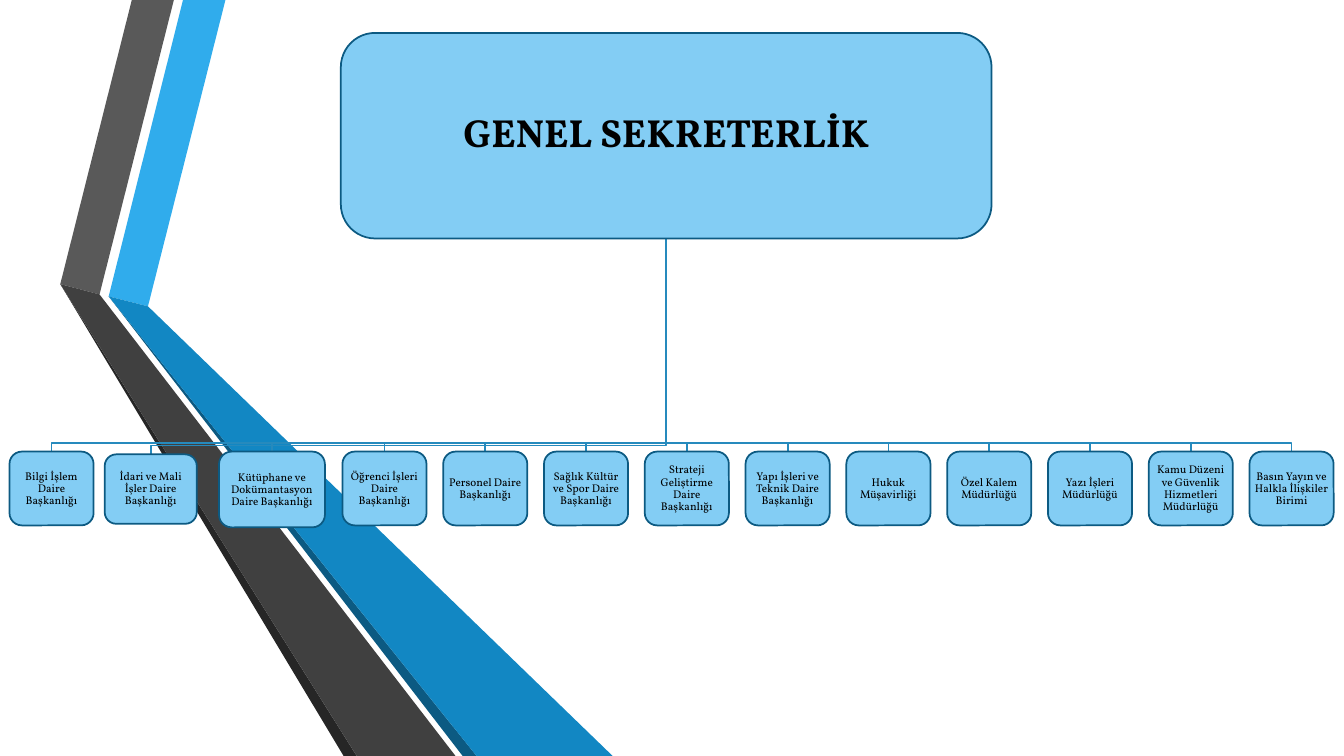
from pptx import Presentation
from pptx.dml.color import RGBColor
from pptx.enum.shapes import MSO_SHAPE
from pptx.enum.text import MSO_ANCHOR, MSO_AUTO_SIZE, PP_ALIGN
from pptx.util import Cm, Pt

ROUNDED = MSO_SHAPE.ROUNDED_RECTANGLE
MIDDLE = MSO_ANCHOR.MIDDLE
NO_AUTOFIT = MSO_AUTO_SIZE.NONE
CENTER = PP_ALIGN.CENTER
TITLE_ONLY = 5

FONT = "Vollkorn"
BOX_FILL, BOX_LINE, BRANCH_LINE, BLACK = "83CDF4", "0C5A82", "268ABD", "000000"

# Ribbon bands: colour and corners, in cm
BANDS = [
    ("30ACEC", [(2.74, 7.47), (3.73, 7.72), (5.69, -0.03), (4.62, -0.03)]),
    ("595959", [(2.51, 7.42), (4.39, -0.03), (3.33, -0.03), (1.52, 7.16)]),
    ("262626", [(1.52, 7.16), (8.66, 19.05), (8.99, 19.05)]),
    ("0C5A82", [(12.01, 19.05), (2.74, 7.47), (11.66, 19.05)]),
    ("1287C3", [(2.74, 7.47), (12.01, 19.05), (15.44, 19.05), (3.73, 7.72)]),
    ("404040", [(11.48, 19.05), (2.51, 7.42), (1.52, 7.16), (8.99, 19.05)]),
]

# Head box and unit boxes: left, top, width, height, in cm
HEAD = (8.59, 0.83, 16.4, 5.18)
HEAD_TEXT = (8.84, 1.07, 15.9, 4.67)
UNIT_TOP, UNIT_WIDTH, UNIT_HEIGHT = 11.38, 2.12, 1.86
ROW_LEFT, ROW_PITCH = 8.63, 2.54
BRANCH_RISE = 0.22

FIRST_UNITS = [
    ("Bilgi İşlem Daire Başkanlığı", (0.24, UNIT_TOP, UNIT_WIDTH, UNIT_HEIGHT)),
    ("İdari ve Mali İşler Daire Başkanlığı", (2.64, 11.45, 2.32, 1.75)),
    ("Kütüphane ve Dokümantasyon Daire Başkanlığı", (5.52, UNIT_TOP, 2.67, 1.91)),
]
ROW_UNITS = [
    "Öğrenci İşleri Daire Başkanlığı",
    "Personel Daire Başkanlığı",
    "Sağlık Kültür ve Spor Daire Başkanlığı",
    "Strateji Geliştirme Daire Başkanlığı",
    "Yapı İşleri ve Teknik Daire Başkanlığı",
    "Hukuk Müşavirliği",
    "Özel Kalem Müdürlüğü",
    "Yazı İşleri Müdürlüğü",
    "Kamu Düzeni ve Güvenlik Hizmetleri Müdürlüğü",
    "Basın Yayın ve Halkla İlişkiler Birimi",
]


def color(hex_code):
    return RGBColor.from_string(hex_code)


def draw_path(slide, points, closed):
    corners = [(Cm(x), Cm(y)) for x, y in points]
    builder = slide.shapes.build_freeform(*corners[0], scale=1.0)
    builder.add_line_segments(corners[1:], close=closed)
    outline = builder.convert_to_shape()
    outline.shadow.inherit = False
    return outline


def add_band(slide, fill, points):
    band = draw_path(slide, points, True)
    band.fill.solid()
    band.fill.fore_color.rgb = color(fill)
    band.line.fill.background()


def add_branch(slide, unit_area):
    """Line from the foot of the head box to the top of a unit box."""
    left, top, width, _ = unit_area
    trunk, foot = HEAD[0] + HEAD[2] / 2, HEAD[1] + HEAD[3]
    center, bend = left + width / 2, top - BRANCH_RISE
    points = [(trunk, foot), (trunk, bend), (center, bend), (center, top)]
    branch = draw_path(slide, points, False)
    branch.fill.background()
    branch.line.color.rgb = color(BRANCH_LINE)
    branch.line.width = Pt(1.25)


def add_box(slide, area):
    box = slide.shapes.add_shape(ROUNDED, *map(Cm, area))
    box.shadow.inherit = False
    box.fill.solid()
    box.fill.fore_color.rgb = color(BOX_FILL)
    box.line.color.rgb = color(BOX_LINE)
    box.line.width = Pt(1.25)
    return box


def write_label(frame, label, size, margin, bold=False):
    frame.word_wrap = True
    frame.auto_size = NO_AUTOFIT
    frame.vertical_anchor = MIDDLE
    frame.margin_left = frame.margin_right = Cm(margin)
    frame.margin_top = frame.margin_bottom = Cm(margin)
    paragraph = frame.paragraphs[0]
    paragraph.alignment = CENTER
    paragraph.line_spacing = 0.9
    paragraph.space_after = Pt(size * 0.35)
    run = paragraph.add_run()
    run.text = label
    run.font.name = FONT
    run.font.size = Pt(size)
    run.font.bold = bold
    run.font.color.rgb = color(BLACK)


def add_head(slide):
    add_box(slide, HEAD)
    heading = slide.shapes.title
    heading.left, heading.top, heading.width, heading.height = map(Cm, HEAD_TEXT)
    write_label(heading.text_frame, "GENEL SEKRETERLİK", 28, 0.05, bold=True)
    # Bring the heading in front of its box
    heading.element.getparent().append(heading.element)


def main():
    prs = Presentation()
    prs.slide_width, prs.slide_height = Cm(33.87), Cm(19.05)
    slide = prs.slides.add_slide(prs.slide_layouts[TITLE_ONLY])

    # Ribbon
    for fill, points in BANDS:
        add_band(slide, fill, points)

    # Organisation chart
    units = FIRST_UNITS + [
        (label, (ROW_LEFT + i * ROW_PITCH, UNIT_TOP, UNIT_WIDTH, UNIT_HEIGHT))
        for i, label in enumerate(ROW_UNITS)
    ]
    for _, area in units:
        add_branch(slide, area)
    add_head(slide)
    for label, area in units:
        write_label(add_box(slide, area).text_frame, label, 8, 0.03)

    prs.save("out.pptx")


if __name__ == "__main__":
    main()
